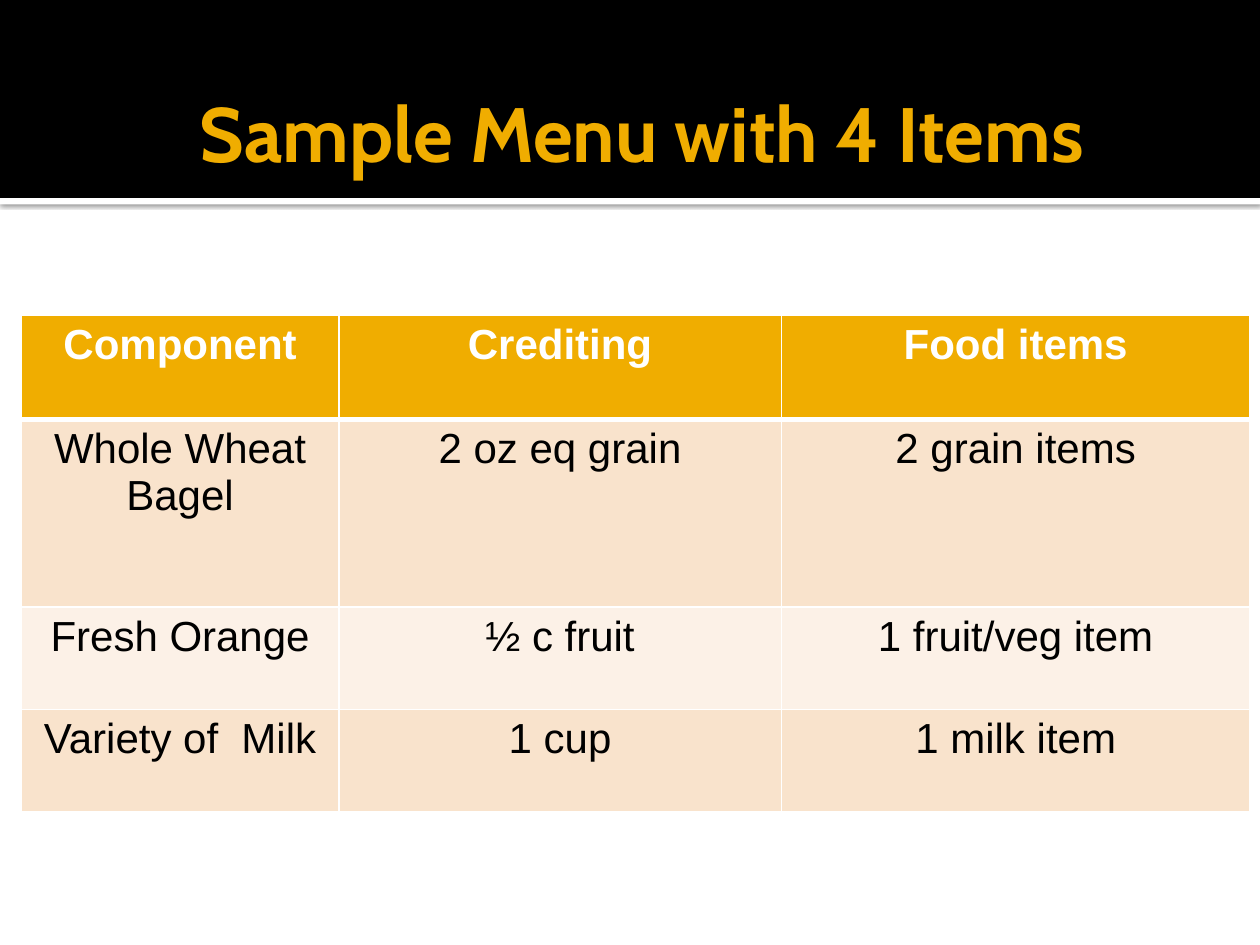
from lxml import etree
from pptx import Presentation
from pptx.dml.color import RGBColor
from pptx.enum.shapes import MSO_SHAPE
from pptx.enum.text import MSO_ANCHOR, PP_ALIGN
from pptx.oxml.ns import qn
from pptx.util import Cm, Pt

RECT = MSO_SHAPE.RECTANGLE
MID = MSO_ANCHOR.MIDDLE
MIDDLE = PP_ALIGN.CENTER

TITLE = " Sample Menu with 4 Items"
ROWS = [
    ("Component", "Crediting", "Food items"),
    ("Whole Wheat Bagel", "2 oz eq grain", "2 grain items"),
    ("Fresh Orange", "½ c fruit", "1 fruit/veg item"),
    ("Variety of  Milk", "1 cup", "1 milk item"),
]
WIDTHS = [6.4, 8.92, 9.45]
HEIGHTS = [2.1, 3.78, 2.06, 2.06]
COLORS = {
    "gold": "F0AD00",
    "white": "FFFFFF",
    "black": "000000",
    "peach": "F9E3CC",
    "cream": "FCF1E7",
}
WIDE, HIGH = 25.4, 19.05
BAND = 3.99


def color(name):
    return RGBColor.from_string(COLORS[name])


def style(frame, font, size, tint, bold):
    para = frame.paragraphs[0]
    para.alignment = MIDDLE
    for run in para.runs:
        run.font.name = font
        run.font.size = Pt(size)
        run.font.bold = bold
        run.font.color.rgb = color(tint)


def add_bar(slide, top, height, tint):
    bar = slide.shapes.add_shape(RECT, 0, Cm(top), Cm(WIDE), Cm(height))
    bar.shadow.inherit = False
    bar.fill.solid()
    bar.fill.fore_color.rgb = color(tint)
    bar.line.fill.background()
    return bar


def add_shadow(bar):
    effects = bar._element.spPr.find(qn("a:effectLst"))
    shade = etree.SubElement(effects, qn("a:outerShdw"), blurRad=str(Pt(2.5)),
                             dist=str(Pt(0.8)), dir="5400000",
                             algn="t", rotWithShape="0")
    tint = etree.SubElement(shade, qn("a:srgbClr"), val=COLORS["black"])
    etree.SubElement(tint, qn("a:alpha"), val="60000")


def add_title(slide):
    box = slide.shapes.add_textbox(Cm(0.43), Cm(1.07), Cm(24.56), Cm(3.18))
    frame = box.text_frame
    frame.word_wrap = True
    frame.vertical_anchor = MID
    frame.margin_right = Cm(0.13)
    frame.text = TITLE
    style(frame, "Cabin", 44, "gold", True)


def add_edges(cell, head, below):
    props = cell._tc.get_or_add_tcPr()
    sides = {"lnL": 1, "lnR": 1, "lnT": 3 if below else 1, "lnB": 3 if head else 1}
    for spot, (side, size) in enumerate(sides.items()):
        edge = etree.Element(qn("a:" + side), w=str(Pt(size)))
        fill = etree.SubElement(edge, qn("a:solidFill"))
        etree.SubElement(fill, qn("a:srgbClr"), val=COLORS["white"])
        props.insert(spot, edge)


def add_menu(slide):
    grid = slide.shapes.add_table(
        len(ROWS), len(WIDTHS), Cm(0.43), Cm(6.36),
        Cm(sum(WIDTHS)), Cm(sum(HEIGHTS))).table
    for col, width in zip(grid.columns, WIDTHS):
        col.width = Cm(width)
    for r, (row, height) in enumerate(zip(ROWS, HEIGHTS)):
        grid.rows[r].height = Cm(height)
        head = r == 0
        back = "gold" if head else "peach" if r % 2 else "cream"
        for c, text in enumerate(row):
            cell = grid.cell(r, c)
            cell.text_frame.text = text
            style(cell.text_frame, "Arial", 24, "white" if head else "black", head)
            cell.fill.solid()
            cell.fill.fore_color.rgb = color(back)
            add_edges(cell, head, r == 1)


def main():
    deck = Presentation()
    deck.slide_width, deck.slide_height = Cm(WIDE), Cm(HIGH)
    slide = deck.slides.add_slide(deck.slide_layouts[6])
    add_shadow(add_bar(slide, BAND, 0.13, "white"))
    add_bar(slide, 0, BAND, "black")
    add_title(slide)
    add_menu(slide)
    deck.save("out.pptx")


if __name__ == "__main__":
    main()
